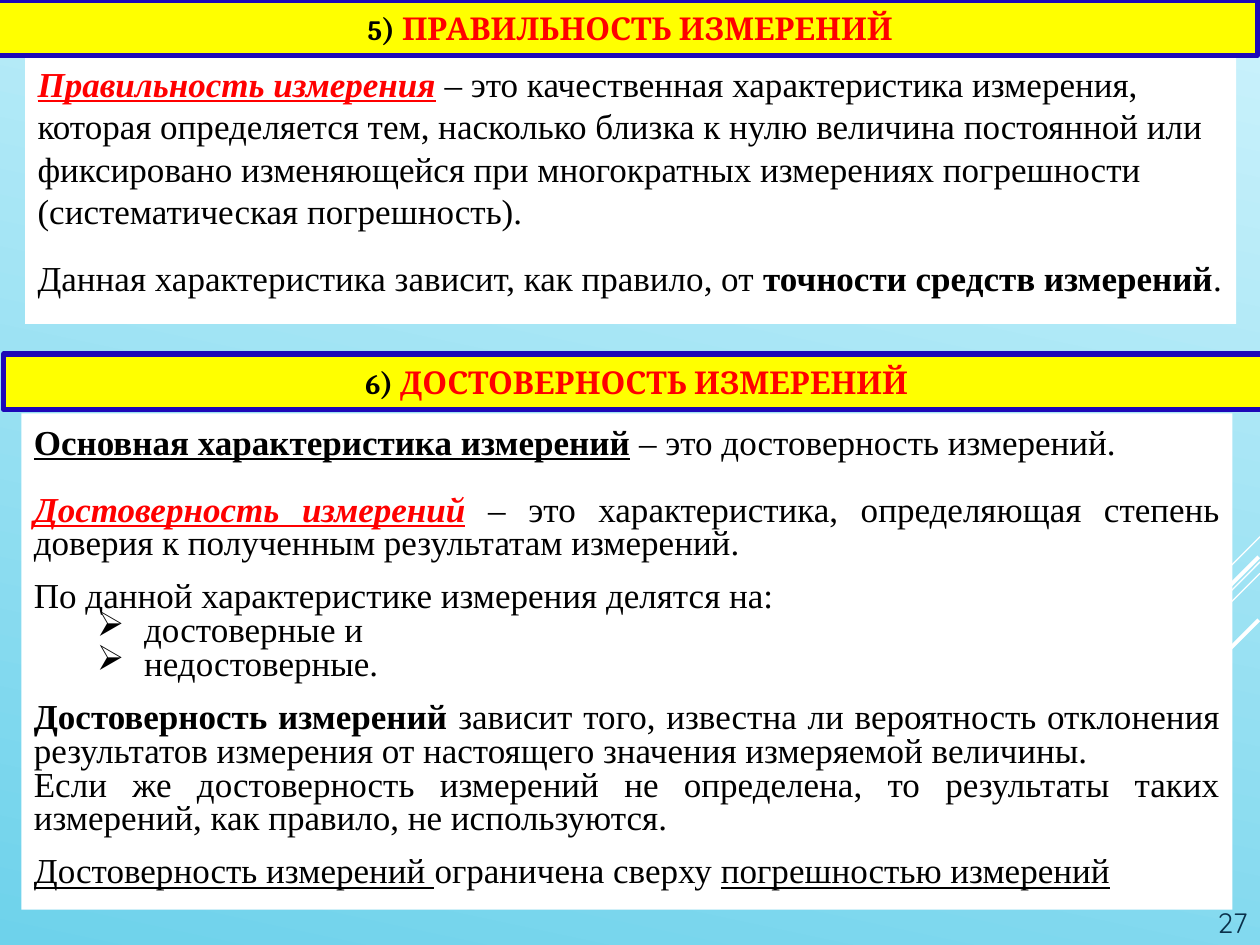
from lxml.etree import SubElement
from pptx import Presentation
from pptx.dml.color import RGBColor
from pptx.enum.shapes import MSO_CONNECTOR, MSO_SHAPE
from pptx.enum.text import MSO_ANCHOR, MSO_AUTO_SIZE, PP_ALIGN
from pptx.oxml.ns import qn
from pptx.util import Pt

BLACK = RGBColor(0, 0, 0)
WHITE = RGBColor(0xFF, 0xFF, 0xFF)
RED = RGBColor(0xFF, 0, 0)
YELLOW = RGBColor(0xFF, 0xFF, 0)
BLUE = RGBColor(0x1D, 0x08, 0xB8)
NAVY = RGBColor(0x0A, 0x30, 0x4A)
SKY_LIGHT = RGBColor(0xC8, 0xF1, 0xFB)
SKY_DARK = RGBColor(0x6E, 0xD2, 0xEB)

# Line pitches of the body text
OPEN, TIGHT = 24.3, 19.3

# Run styles
TERM = dict(bold=True, italic=True, underline=True, color=RED)
KEY = dict(bold=True, underline=True)
BOLD = dict(bold=True)
UNDER = dict(underline=True)

# Paragraphs: runs, then keyword options of add_paragraph
ACCURACY = [
    ([("Правильность измерения", TERM),
      (" – это качественная характеристика измерения, которая определяется тем, "
       "насколько близка к нулю величина постоянной или фиксировано изменяющейся "
       "при многократных измерениях погрешности (систематическая погрешность).", {})],
     dict(pitch=OPEN)),
    ([("Данная характеристика зависит, как правило, от ", {}),
      ("точности средств измерений", BOLD), (".", {})],
     dict(pitch=OPEN, before=14)),
]
RELIABILITY = [
    ([("Основная характеристика измерений", KEY),
      (" – это достоверность измерений.", {})], dict(pitch=OPEN)),
    ([("Достоверность измерений", TERM),
      (" – это характеристика, определяющая степень доверия к полученным "
       "результатам измерений.", {})], dict(justify=True, before=19)),
    ([("По данной характеристике измерения делятся на:", {})],
     dict(justify=True, before=11)),
    ([("достоверные и", {})], dict(justify=True, bullet="➢")),
    ([("недостоверные.", {})], dict(justify=True, bullet="➢")),
    ([("Достоверность измерений ", BOLD),
      ("зависит того, известна ли вероятность отклонения результатов измерения "
       "от настоящего значения измеряемой величины.", {})],
     dict(justify=True, before=11)),
    ([("Если же достоверность измерений не определена, то результаты таких "
       "измерений, как правило, не используются.", {})], dict(justify=True)),
    ([("Достоверность измерений ", UNDER), ("ограничена сверху ", {}),
      ("погрешностью измерений", UNDER)], dict(justify=True, before=11)),
]

# Decorative diagonals: x1, y1, x2, y2, width
DIAGONALS = [
    (720, 306.7, 660.2, 366.5, 0.75),
    (720, 321.1, 525.6, 516.2, 0.75),
    (720, 327.6, 596.2, 451.4, 0.75),
    (719.3, 318.2, 606.2, 431.3, 2.25),
    (719.3, 354.2, 637.2, 436.3, 2.25),
]


def set_background(s):
    fill = s.background.fill
    fill.gradient()
    fill.gradient_angle = 258
    for stop, pos, color in zip(fill.gradient_stops, (0.04, 1), (SKY_LIGHT, SKY_DARK)):
        stop.position = pos
        stop.color.rgb = color


def add_line(s, x1, y1, x2, y2, width):
    line = s.shapes.add_connector(MSO_CONNECTOR.STRAIGHT, Pt(x1), Pt(y1), Pt(x2), Pt(y2))
    line.line.color.rgb = WHITE
    line.line.width = Pt(width)
    SubElement(line._element.spPr, qn("a:effectLst"))


def add_run(p, text, size, font, color=BLACK, bold=False, italic=False, underline=False):
    r = p.add_run()
    r.text = text
    f = r.font
    f.size, f.name = Pt(size), font
    f.bold, f.italic, f.underline = bold, italic, underline
    f.color.rgb = color


def add_paragraph(p, runs, pitch=TIGHT, before=0, justify=False, bullet=None):
    p.alignment = PP_ALIGN.JUSTIFY if justify else PP_ALIGN.LEFT
    p.line_spacing = Pt(pitch)
    p.space_before = Pt(before)
    if bullet:
        p.level = 1
        pPr = p._p.get_or_add_pPr()
        pPr.set("marL", str(Pt(63)))
        pPr.set("indent", str(Pt(-27)))
        SubElement(pPr, qn("a:buChar"), char=bullet)
    for text, style in runs:
        add_run(p, text, 20, "Times New Roman", **style)


def add_rect(s, left, top, width, height):
    sp = s.shapes.add_shape(MSO_SHAPE.RECTANGLE, Pt(left), Pt(top), Pt(width), Pt(height))
    sp.shadow.inherit = False
    return sp


def add_panel(s, left, top, height, paragraphs):
    sp = add_rect(s, left, top, 692, height)
    sp.fill.solid()
    sp.fill.fore_color.rgb = WHITE
    sp.line.fill.background()
    tf = sp.text_frame
    tf.word_wrap = True
    tf.vertical_anchor = MSO_ANCHOR.TOP
    for i, (runs, options) in enumerate(paragraphs):
        p = tf.add_paragraph() if i else tf.paragraphs[0]
        add_paragraph(p, runs, **options)


def format_banner(sp, number, heading):
    sp.fill.solid()
    sp.fill.fore_color.rgb = YELLOW
    sp.line.color.rgb = BLUE
    sp.line.width = Pt(3)
    tf = sp.text_frame
    tf.auto_size = MSO_AUTO_SIZE.NONE
    tf.word_wrap = False
    tf.vertical_anchor = MSO_ANCHOR.MIDDLE
    p = tf.paragraphs[0]
    p.alignment = PP_ALIGN.CENTER
    add_run(p, " " + number, 16, "Cambria", bold=True)
    add_run(p, ") ", 18, "Cambria", bold=True)
    add_run(p, heading, 18, "Cambria", RED, bold=True)


def add_page_number(s, text):
    tf = s.shapes.add_textbox(Pt(652.3), Pt(487.4), Pt(67.7), Pt(52.6)).text_frame
    tf.word_wrap = True
    tf.vertical_anchor = MSO_ANCHOR.BOTTOM
    p = tf.paragraphs[0]
    p.alignment = PP_ALIGN.RIGHT
    add_run(p, text, 16, "Quicksand", NAVY)


def main():
    prs = Presentation()
    prs.slide_width, prs.slide_height = Pt(720), Pt(540)
    s = prs.slides.add_slide(prs.slide_layouts[5])
    set_background(s)
    for diagonal in DIAGONALS:
        add_line(s, *diagonal)

    # First topic: the title lies over its panel
    add_panel(s, 14.4, 31.7, 153.4, ACCURACY)
    add_page_number(s, "27")
    title = s.shapes.title
    title.left, title.top, title.width, title.height = Pt(-1.5), Pt(0), Pt(720), Pt(31.7)
    format_banner(title, "5", "ПРАВИЛЬНОСТЬ ИЗМЕРЕНИЙ")
    s.shapes._spTree.append(title._element)

    # Second topic
    format_banner(add_rect(s, 2.2, 202.3, 720, 31.7), "6", "ДОСТОВЕРНОСТЬ ИЗМЕРЕНИЙ")
    add_panel(s, 12.3, 236.2, 283.7, RELIABILITY)
    prs.save("out.pptx")


if __name__ == "__main__":
    main()
